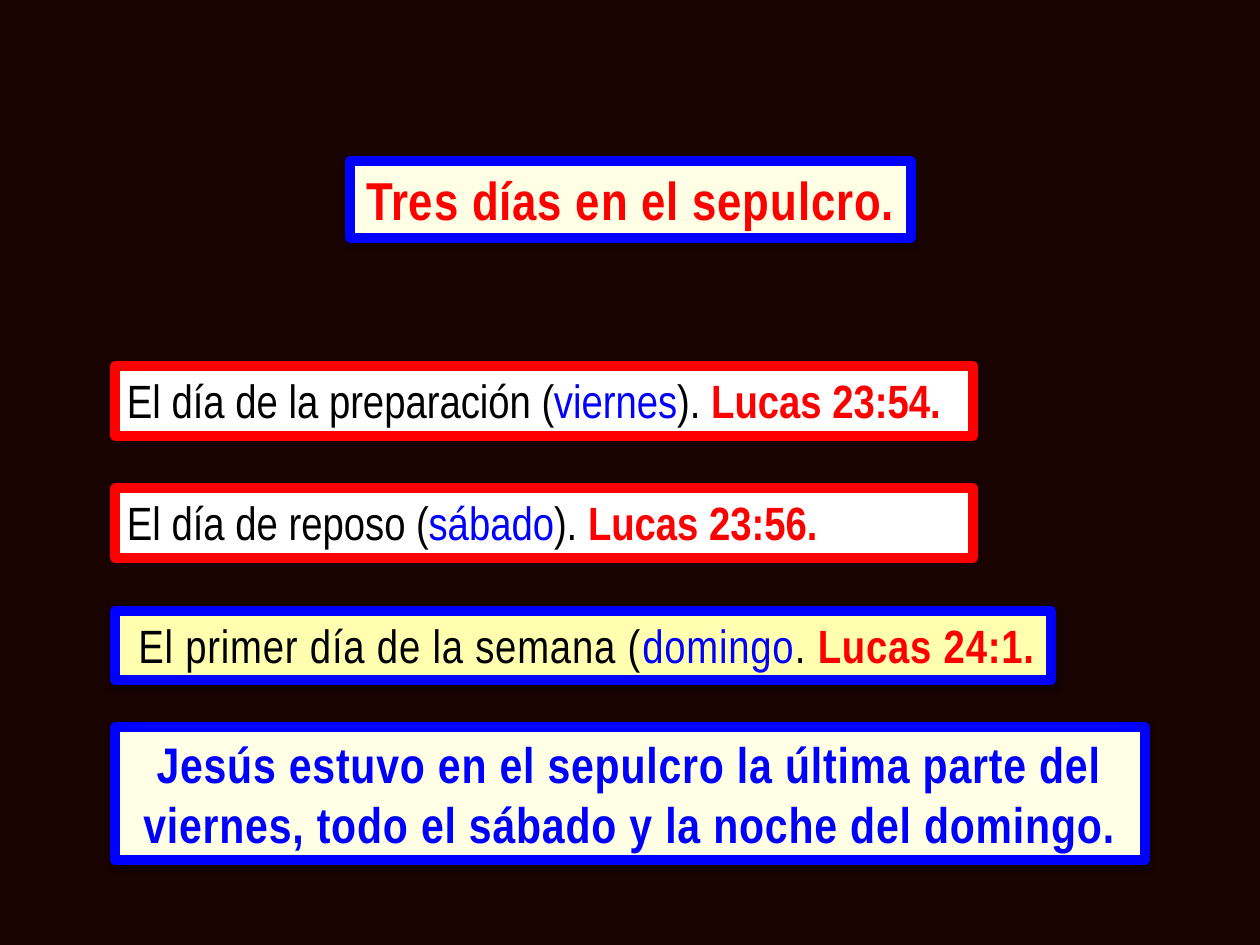
from lxml.etree import SubElement, fromstring
from pptx import Presentation
from pptx.dml.color import RGBColor
from pptx.enum.shapes import MSO_SHAPE as Shape
from pptx.enum.text import MSO_ANCHOR as Anchor, MSO_AUTO_SIZE as AutoSize, PP_ALIGN as Align
from pptx.util import Inches, Pt

COLORS = {
    "night": "190301", "cream": "FFFFE5", "yellow": "FFFFAF", "white": "FFFFFF",
    "blue": "0000FF", "red": "FF0000", "black": "000000",
}
NS = "http://schemas.openxmlformats.org/drawingml/2006/main"
WIDTH = 10.5
HEIGHT = WIDTH * 3 / 4
LEFT = 0.96
ROW_HEIGHT = 0.58
ROW_TOP, ROW_STEP = 3.05, 1.02


def rgb(name):
    return RGBColor.from_string(COLORS[name])


def outline(span, color, width):
    """Draw the contour of the letters in a run, width in points."""
    span.font._element.insert(0, fromstring(
        f'<a:ln xmlns:a="{NS}" w="{Pt(width)}"><a:solidFill>'
        f'<a:srgbClr val="{COLORS[color]}"/></a:solidFill></a:ln>'))


deck = Presentation()
deck.slide_width, deck.slide_height = Inches(WIDTH), Inches(HEIGHT)
page = deck.slides.add_slide(deck.slide_layouts[6])
page.background.fill.solid()
page.background.fill.fore_color.rgb = rgb("night")

# Each day: opening words, day name, closing words, verse
days = [
    ("El día de la preparación (", "viernes", "). ", "Lucas 23:54."),
    ("El día de reposo (", "sábado", "). ", "Lucas 23:56."),
    (" El primer día de la semana (", "domingo", ". ", "Lucas 24:1."),
]
day_styles = [("black", 1.5, False), ("blue", 1.5, False),
              ("black", 1.5, False), ("red", 0.25, True)]
day_looks = [(7.15, "white", "red", False), (7.15, "white", "red", False),
             (7.8, "yellow", "blue", True)]

# Each box: place, fill, border, accented (shadow and spaced letters), size, align, spans
boxes = [((2.92, 1.34, 4.67, 0.64), "cream", "blue", True, 32, Align.CENTER,
          [("Tres días en el sepulcro.", "red", 1, True)])]
for row, (words, (width, fill, border, accented)) in enumerate(zip(days, day_looks)):
    place = (LEFT, ROW_TOP + row * ROW_STEP, width, ROW_HEIGHT)
    spans = [(text, *style) for text, style in zip(words, day_styles)]
    boxes.append((place, fill, border, accented, 28, Align.LEFT, spans))
boxes.append(((LEFT, 6.06, 8.58, 1.11), "cream", "blue", True, 30, Align.CENTER,
              [("Jesús estuvo en el sepulcro la última parte del viernes, "
                "todo el sábado y la noche del domingo.", "blue", 0.25, True)]))

for place, fill, border, accented, size, align, spans in boxes:
    box = page.shapes.add_shape(Shape.RECTANGLE, *map(Inches, place))
    box.fill.solid()
    box.fill.fore_color.rgb = rgb(fill)
    box.line.color.rgb = rgb(border)
    box.line.width = Pt(6)
    box.shadow.inherit = False
    if accented:
        effects = box._element.spPr.find(f"{{{NS}}}effectLst")
        shadow = SubElement(effects, f"{{{NS}}}outerShdw", blurRad=str(Pt(3.1)),
                            dist=str(Pt(1.6)), dir="5400000", rotWithShape="0")
        tint = SubElement(shadow, f"{{{NS}}}srgbClr", val=COLORS["black"])
        SubElement(tint, f"{{{NS}}}alpha", val="38000")

    frame = box.text_frame
    frame.word_wrap = True
    frame.auto_size = AutoSize.SHAPE_TO_FIT_TEXT
    frame.vertical_anchor = Anchor.TOP
    para = frame.paragraphs[0]
    para.alignment = align
    para.font.name = "Arial Narrow"
    para.font.size = Pt(size)
    for text, color, contour, bold in spans:
        span = para.add_run()
        span.text = text
        span.font.bold = bold
        span.font.color.rgb = rgb(color)
        outline(span, color, contour)
        if accented:
            span.font._element.set("spc", "50")

deck.save("out.pptx")
